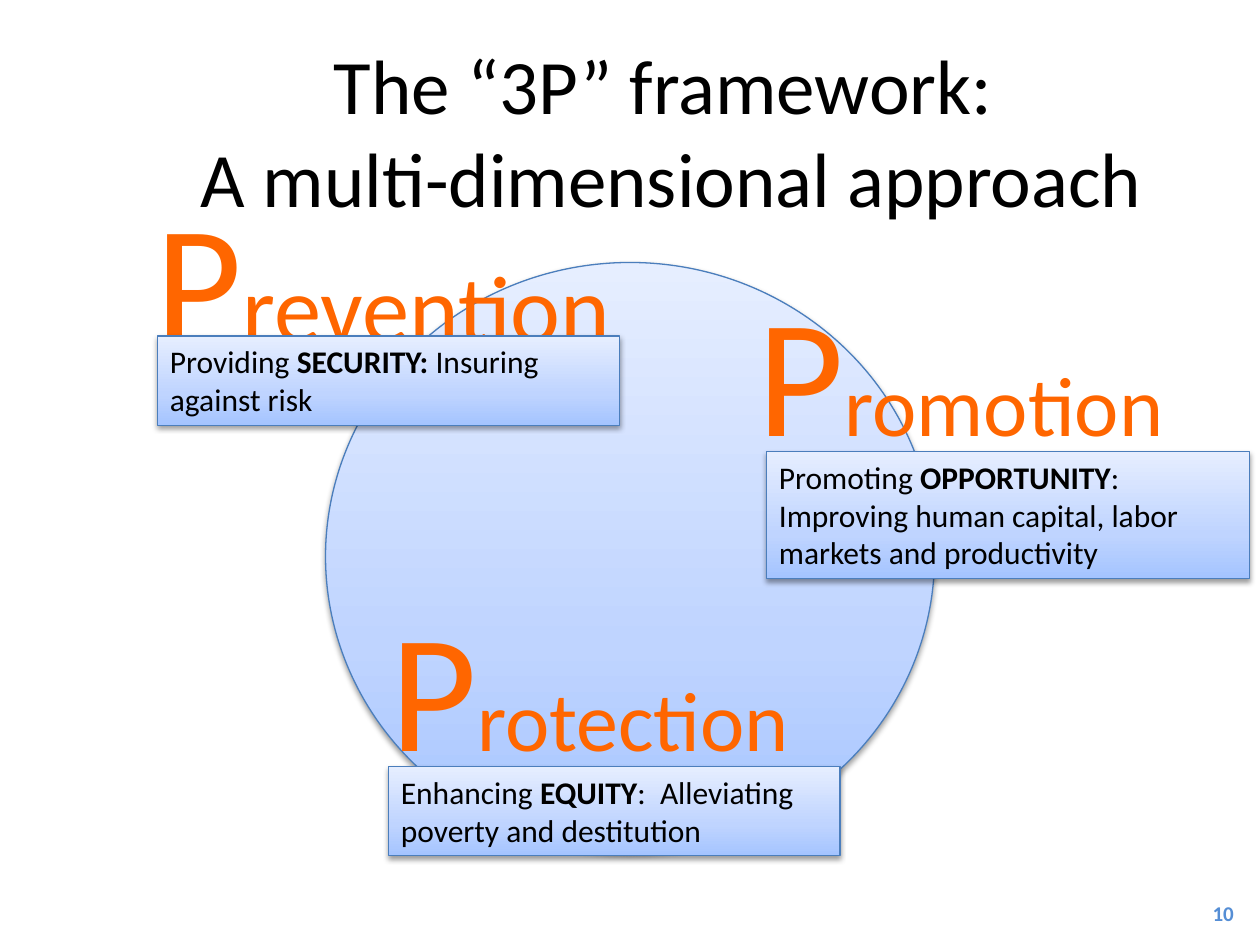
from lxml import etree
from pptx import Presentation
from pptx import util as u
from pptx.dml.color import RGBColor
from pptx.enum import shapes, text
from pptx.oxml import ns

Pt = u.Pt
THEME = {
    "font": "Calibri",
    "black": "000000", "orange": "FF6600", "number": "558ED5", "outline": "4B7EBC",
    "gradient": [(0, "A4C4FF"), (35, "BFD4FF"), (100, "E6EEFF")],
    "title": 44, "initial": 96, "body": 18, "small": 12,
}


def style_run(r, size, color, bold=False):
    r.font.name = THEME["font"]
    r.font.size = Pt(size)
    r.font.bold = bold
    r.font.color.rgb = RGBColor.from_string(THEME[color])


def add_gradient_shape(kind, left, top, width, height):
    sp = s.shapes.add_shape(kind, Pt(left), Pt(top), Pt(width), Pt(height))
    sp.line.color.rgb = RGBColor.from_string(THEME["outline"])
    sp.line.width = Pt(0.75)
    # Three-stop gradient, lightest at the top
    sp.fill.gradient()
    sp.fill.gradient_angle = 90
    stops = sp._element.spPr.find(".//" + ns.qn("a:gsLst"))
    for stop in list(stops):
        stops.remove(stop)
    for pos, color in THEME["gradient"]:
        stop = etree.SubElement(stops, ns.qn("a:gs"), pos=str(pos * 1000))
        etree.SubElement(stop, ns.qn("a:srgbClr"), val=color)
    # Soft shadow below
    sp.shadow.inherit = False
    effects = sp._element.spPr.find(ns.qn("a:effectLst"))
    shadow = etree.SubElement(effects, ns.qn("a:outerShdw"), blurRad=str(Pt(3.1)),
                              dist=str(Pt(1.6)), dir="5400000", rotWithShape="0")
    color = etree.SubElement(shadow, ns.qn("a:srgbClr"), val=THEME["black"])
    etree.SubElement(color, ns.qn("a:alpha"), val="38000")
    return sp


prs = Presentation()
prs.slide_width, prs.slide_height = Pt(720), Pt(540)
s = prs.slides.add_slide(prs.slide_layouts[5])

# Title
title = s.shapes.title
title.left, title.top, title.width, title.height = Pt(48), Pt(18), Pt(672), Pt(96)
tf = title.text_frame
tf.text = "The “3P” framework: \nA multi-dimensional approach"
tf.auto_size = text.MSO_AUTO_SIZE.NONE
tf.vertical_anchor = text.MSO_ANCHOR.TOP
for p in tf.paragraphs:
    p.alignment = text.PP_ALIGN.CENTER
    style_run(p.runs[0], THEME["title"], "black")

# Circle behind the three dimensions
add_gradient_shape(shapes.MSO_SHAPE.OVAL, 186, 150, 348, 336)

# Headings with a large initial: rest of word, size, left, top, width
headings = [
    ("revention", 54, 82, 96, 277),
    ("romotion", 48, 426, 150, 251),
    ("rotection", 48, 216, 330, 247),
]
for rest, size, left, top, width in headings:
    sp = s.shapes.add_textbox(Pt(left), Pt(top), Pt(width), Pt(123.5))
    tf = sp.text_frame
    tf.word_wrap = False
    tf.auto_size = text.MSO_AUTO_SIZE.SHAPE_TO_FIT_TEXT
    p = tf.paragraphs[0]
    for part, part_size in (("P", THEME["initial"]), (rest, size)):
        r = p.add_run()
        r.text = part
        style_run(r, part_size, "orange")

# Explanations: lead-in, bold goal, rest, then left, top, width, height
explanations = [
    ("Providing ", "SECURITY:", " Insuring against risk", 90, 192, 264, 51),
    ("Enhancing ", "EQUITY", ":  Alleviating poverty and destitution", 222, 438, 258, 51),
    ("Promoting ", "OPPORTUNITY",
     ": Improving human capital, labor markets and productivity", 438, 258, 276, 72.7),
]
for lead, goal, rest, *box in explanations:
    sp = add_gradient_shape(shapes.MSO_SHAPE.RECTANGLE, *box)
    tf = sp.text_frame
    tf.word_wrap = True
    tf.auto_size = text.MSO_AUTO_SIZE.SHAPE_TO_FIT_TEXT
    tf.vertical_anchor = text.MSO_ANCHOR.TOP
    p = tf.paragraphs[0]
    p.alignment = text.PP_ALIGN.LEFT
    for part in (lead, goal, rest):
        r = p.add_run()
        r.text = part
        style_run(r, THEME["body"], "black", bold=part == goal)

# Slide number
sp = s.shapes.add_textbox(Pt(678), Pt(504), Pt(42), Pt(36))
tf = sp.text_frame
tf.text = "10"
tf.word_wrap = True
tf.vertical_anchor = text.MSO_ANCHOR.MIDDLE
p = tf.paragraphs[0]
p.alignment = text.PP_ALIGN.CENTER
style_run(p.runs[0], THEME["small"], "number", bold=True)

prs.save("out.pptx")
